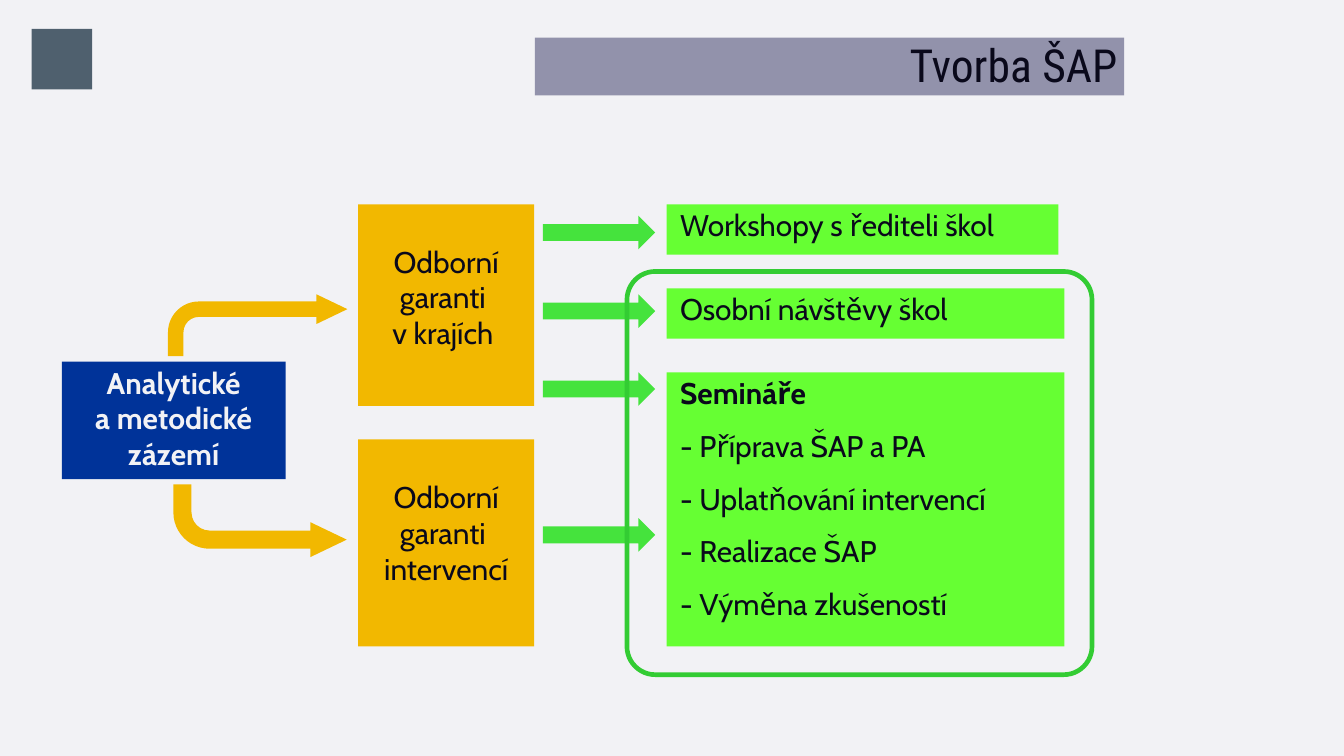
import pptx
import pptx.dml.color
import pptx.enum.shapes
import pptx.enum.text
import pptx.oxml.ns
import pptx.util
from dataclasses import dataclass

Inches = pptx.util.Inches
SHAPE = pptx.enum.shapes.MSO_SHAPE
ALIGN = pptx.enum.text.PP_ALIGN
ANCHOR = pptx.enum.text.MSO_ANCHOR


@dataclass(frozen=True)
class Theme:
    background: str = "F2F2F5"
    ink: str = "0A091B"
    light: str = "F2F2F5"
    logo: str = "4F606E"
    title_bar: str = "9292AB"
    guarantor: str = "F2B800"
    activity: str = "66FF33"
    arrow: str = "45E33D"
    frame: str = "33CC33"
    base: str = "003399"
    title_font: str = "Roboto Condensed"
    body_font: str = "Cabin"
    title_size: float = 48.8
    body_size: float = 32
    frame_width: float = 5


theme = Theme()


def add_block(kind, left, top, width, height, fill=None):
    block = slide.shapes.add_shape(
        kind, Inches(left), Inches(top), Inches(width), Inches(height))
    block.shadow.inherit = False
    block.line.fill.background()
    if fill:
        block.fill.solid()
        block.fill.fore_color.rgb = pptx.dml.color.RGBColor.from_string(fill)
    else:
        block.fill.background()
    return block


def write(block, lines, align=ALIGN.LEFT, indent=0, top=0.04, color=theme.ink,
          font=theme.body_font, size=theme.body_size, bold_lines=0, gap=0):
    frame = block.text_frame
    frame.word_wrap = True
    frame.vertical_anchor = ANCHOR.TOP
    frame.margin_left, frame.margin_right = Inches(indent), Inches(0)
    frame.margin_top, frame.margin_bottom = Inches(top), Inches(0.01)
    frame.text = "\n".join(lines)
    for number, paragraph in enumerate(frame.paragraphs):
        paragraph.alignment = align
        if number:
            paragraph.space_before = pptx.util.Pt(gap)
        for run in paragraph.runs:
            run.font.name = font
            run.font.size = pptx.util.Pt(size)
            run.font.bold = number < bold_lines
            run.font.color.rgb = pptx.dml.color.RGBColor.from_string(color)


presentation = pptx.Presentation()
presentation.slide_width = Inches(20)
presentation.slide_height = Inches(11.25)
slide = presentation.slides.add_slide(presentation.slide_layouts[6])
slide.background.fill.solid()
slide.background.fill.fore_color.rgb = pptx.dml.color.RGBColor.from_string(theme.background)

# Plain block in the logo's place
add_block(SHAPE.RECTANGLE, 0.47, 0.43, 0.9, 0.9, theme.logo)

# Title bar
title = add_block(SHAPE.RECTANGLE, 7.96, 0.56, 8.77, 0.86, theme.title_bar)
write(title, ["Tvorba ŠAP"], ALIGN.RIGHT, font=theme.title_font, size=theme.title_size)
title.text_frame.vertical_anchor = ANCHOR.MIDDLE
title.text_frame.margin_right = Inches(0.1)
title.text_frame.paragraphs[0].line_spacing = 0.9

# Expert guarantors
for top, height, field in [(3.04, 3, "v krajích "), (6.54, 3.08, "intervencí")]:
    guarantors = add_block(SHAPE.RECTANGLE, 5.33, top, 2.62, height, theme.guarantor)
    write(guarantors, ["Odborní garanti ", field], ALIGN.CENTER, top=0.58)

# Workshops and seminars
workshops = add_block(SHAPE.RECTANGLE, 9.92, 3.04, 5.83, 0.75, theme.activity)
write(workshops, ["Workshopy s řediteli škol"], indent=0.2)

seminars = add_block(SHAPE.RECTANGLE, 9.92, 5.54, 5.92, 4.08, theme.activity)
write(seminars, [
    "Semináře",
    "- Příprava ŠAP a PA",
    "- Uplatňování intervencí",
    "- Realizace ŠAP",
    "- Výměna zkušeností",
], indent=0.2, bold_lines=1, gap=18)

# Arrows from guarantors to activities
for top in (3.21, 4.38, 5.54, 7.71):
    add_block(SHAPE.RIGHT_ARROW, 8.08, top, 1.67, 0.5, theme.arrow)

# Bent arrows from the base to the guarantors
for left, top, width, height, downward in [
    (2.5, 4.38, 2.67, 0.92, False),
    (2.58, 7.21, 2.58, 1.08, True),
]:
    branch = add_block(SHAPE.BENT_ARROW, left, top, width, height, theme.guarantor)
    for index, value in enumerate((0.25, 0.24, 0.5, 0.5)):
        branch.adjustments[index] = value
    if downward:
        branch.element.spPr.find(pptx.oxml.ns.qn("a:xfrm")).set("flipV", "1")

# School visits
visits = add_block(SHAPE.RECTANGLE, 9.92, 4.29, 5.92, 0.75, theme.activity)
write(visits, ["Osobní návštěvy škol"], indent=0.2)

# Frame around visits and seminars
school_frame = add_block(SHAPE.ROUNDED_RECTANGLE, 9.33, 4.04, 6.92, 6)
school_frame.adjustments[0] = 0.07
school_frame.line.color.rgb = pptx.dml.color.RGBColor.from_string(theme.frame)
school_frame.line.width = pptx.util.Pt(theme.frame_width)

# Analytical and methodical base
base = add_block(SHAPE.RECTANGLE, 0.92, 5.38, 3.33, 1.75, theme.base)
write(base, ["Analytické", "a metodické zázemí"], ALIGN.CENTER,
      color=theme.light, bold_lines=2)

presentation.save("out.pptx")
